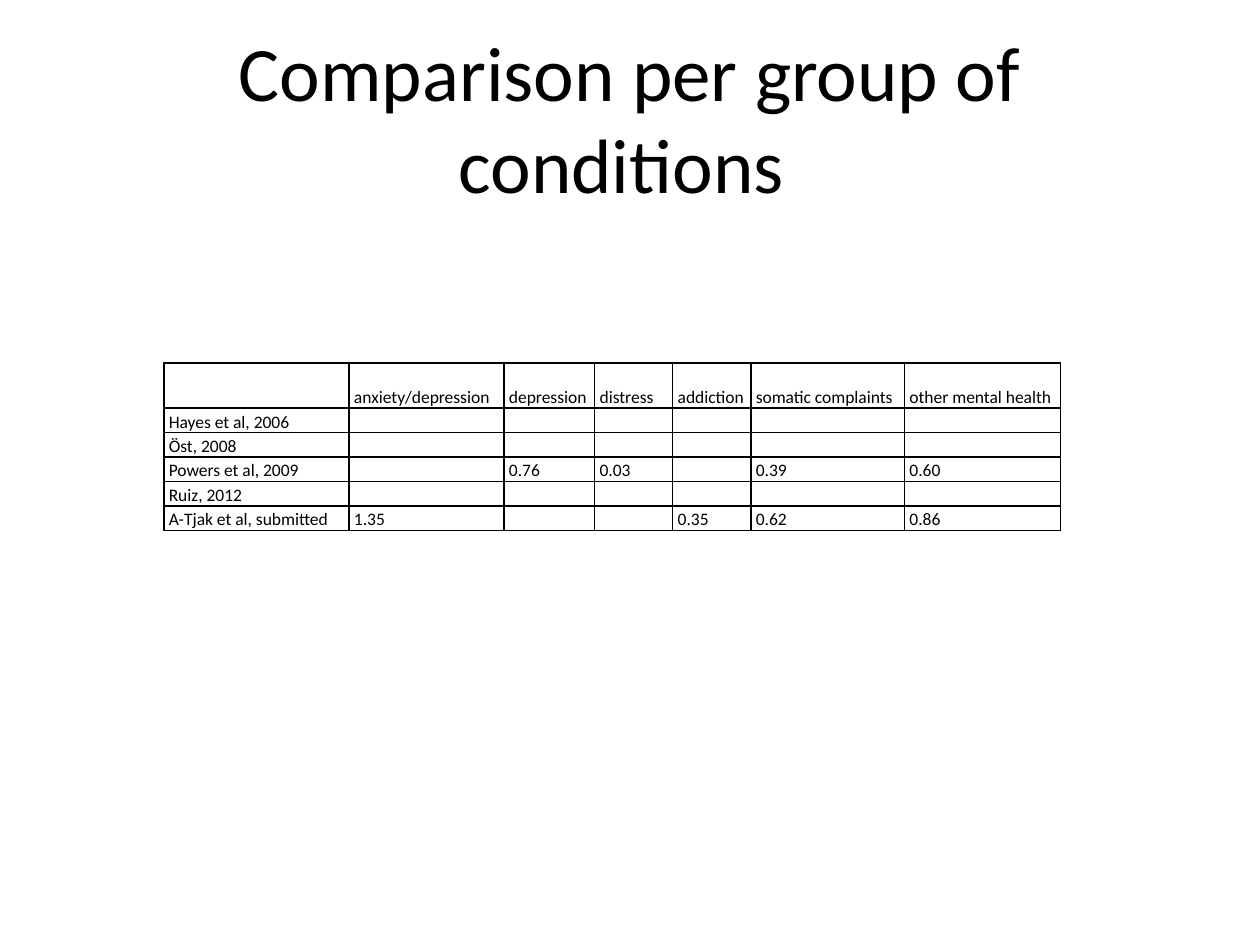
from dataclasses import dataclass

from lxml.etree import SubElement
from pptx import Presentation
from pptx.dml.color import RGBColor
from pptx.enum.text import MSO_ANCHOR, MSO_AUTO_SIZE, PP_ALIGN
from pptx.oxml.ns import qn
from pptx.util import Inches, Pt


@dataclass(frozen=True)
class Theme:
    font: str = "Calibri"
    ink: str = "000000"
    title_size: int = 44
    cell_size: int = 10
    border_width: int = 1


THEME = Theme()
SLIDE_WIDTH, SLIDE_HEIGHT = Inches(10), Inches(7.5)
COLUMN_WIDTHS = [1.47, 1.23, 0.72, 0.62, 0.62, 1.22, 1.24]
HEADER_HEIGHT, STUDY_HEIGHT = 0.36, 0.18
EFFECT_SIZES = [
    ["", "anxiety/depression", "depression", "distress", "addiction",
     "somatic complaints", "other mental health"],
    ["Hayes et al, 2006", "", "", "", "", "", ""],
    ["Öst, 2008", "", "", "", "", "", ""],
    ["Powers et al, 2009", "", "0.76", "0.03", "", "0.39", "0.60"],
    ["Ruiz, 2012", "", "", "", "", "", ""],
    ["A-Tjak et al, submitted", "1.35", "", "", "0.35", "0.62", "0.86"],
]


def write_text(frame, text, size, align=PP_ALIGN.LEFT, spacing=None):
    paragraph = frame.paragraphs[0]
    paragraph.alignment = align
    paragraph.line_spacing = spacing
    if not text:
        SubElement(paragraph._p, qn("a:endParaRPr"), sz=str(size * 100))
        return
    run = paragraph.add_run()
    run.text = text
    run.font.size = Pt(size)
    run.font.name = THEME.font
    run.font.color.rgb = RGBColor.from_string(THEME.ink)


def draw_borders(cell):
    properties = cell._tc.get_or_add_tcPr()
    for edge in ("a:lnL", "a:lnR", "a:lnT", "a:lnB"):
        border = SubElement(properties, qn(edge), w=str(Pt(THEME.border_width)))
        fill = SubElement(border, qn("a:solidFill"))
        SubElement(fill, qn("a:srgbClr"), val=THEME.ink)


def fill_cell(cell, text):
    cell.margin_left = cell.margin_right = Inches(0.04)
    cell.margin_top = cell.margin_bottom = 0
    cell.vertical_anchor = MSO_ANCHOR.BOTTOM
    draw_borders(cell)
    cell.fill.background()
    write_text(cell.text_frame, text, THEME.cell_size, spacing=1.15)


def add_comparison(slide):
    row_heights = [HEADER_HEIGHT] + [STUDY_HEIGHT] * (len(EFFECT_SIZES) - 1)
    comparison = slide.shapes.add_table(
        len(row_heights), len(COLUMN_WIDTHS), Inches(1.3), Inches(2.88),
        Inches(sum(COLUMN_WIDTHS)), Inches(sum(row_heights))).table
    comparison.first_row = comparison.horz_banding = False
    for column, width in zip(comparison.columns, COLUMN_WIDTHS):
        column.width = Inches(width)
    for row, height, entries in zip(comparison.rows, row_heights, EFFECT_SIZES):
        row.height = Inches(height)
        for cell, entry in zip(row.cells, entries):
            fill_cell(cell, entry)


def set_title(slide, text):
    title = slide.shapes.title
    title.left, title.top = int(SLIDE_WIDTH * 0.05), int(SLIDE_HEIGHT * 0.04)
    title.width, title.height = int(SLIDE_WIDTH * 0.9), int(SLIDE_HEIGHT / 6)
    frame = title.text_frame
    frame.word_wrap = True
    frame.auto_size = MSO_AUTO_SIZE.NONE
    frame.vertical_anchor = MSO_ANCHOR.MIDDLE
    write_text(frame, text, THEME.title_size, align=PP_ALIGN.CENTER)


def main():
    presentation = Presentation()
    presentation.slide_width = SLIDE_WIDTH
    presentation.slide_height = SLIDE_HEIGHT
    slide = presentation.slides.add_slide(presentation.slide_layouts[5])
    add_comparison(slide)
    set_title(slide, "Comparison per group of conditions ")
    presentation.save("out.pptx")


if __name__ == "__main__":
    main()
